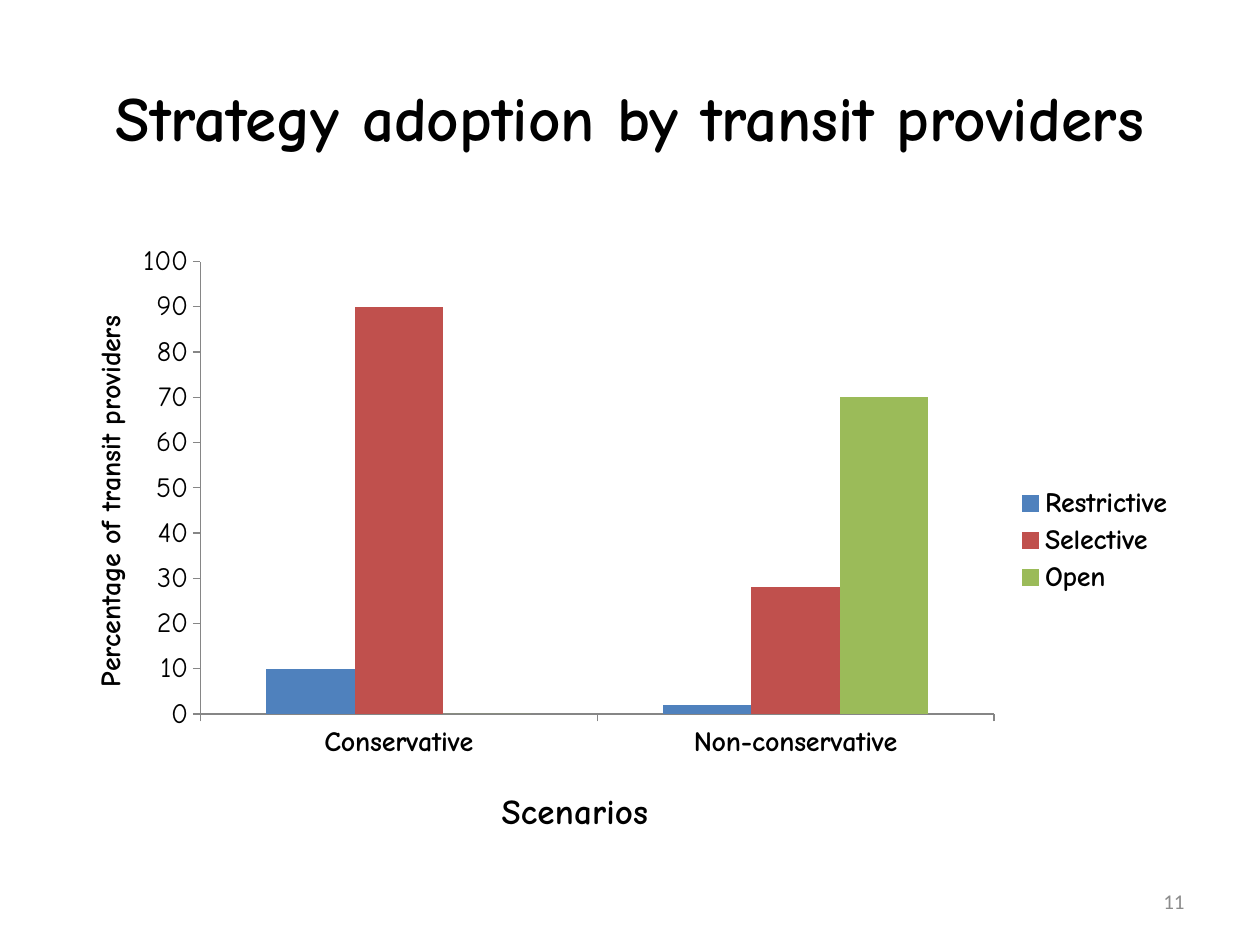
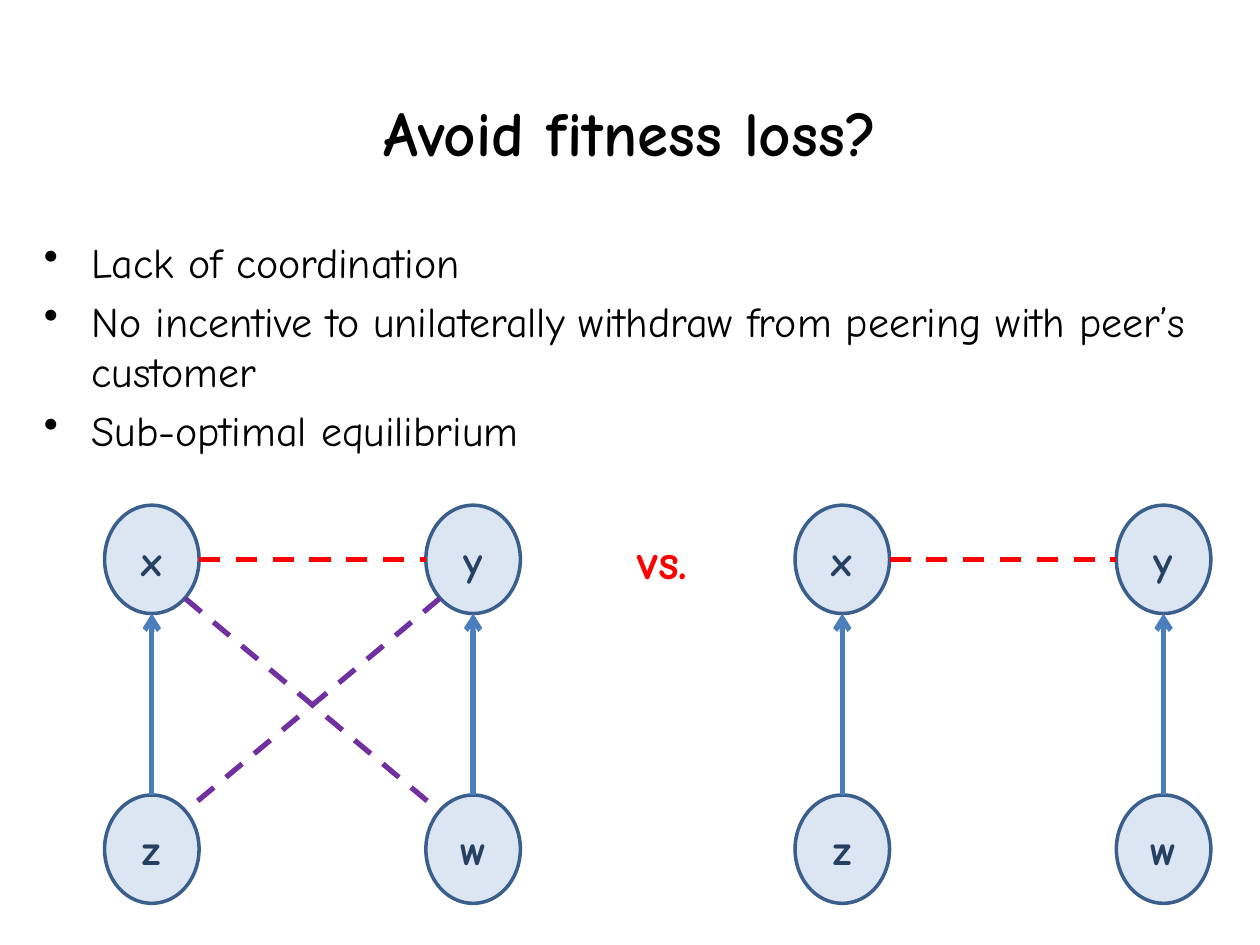
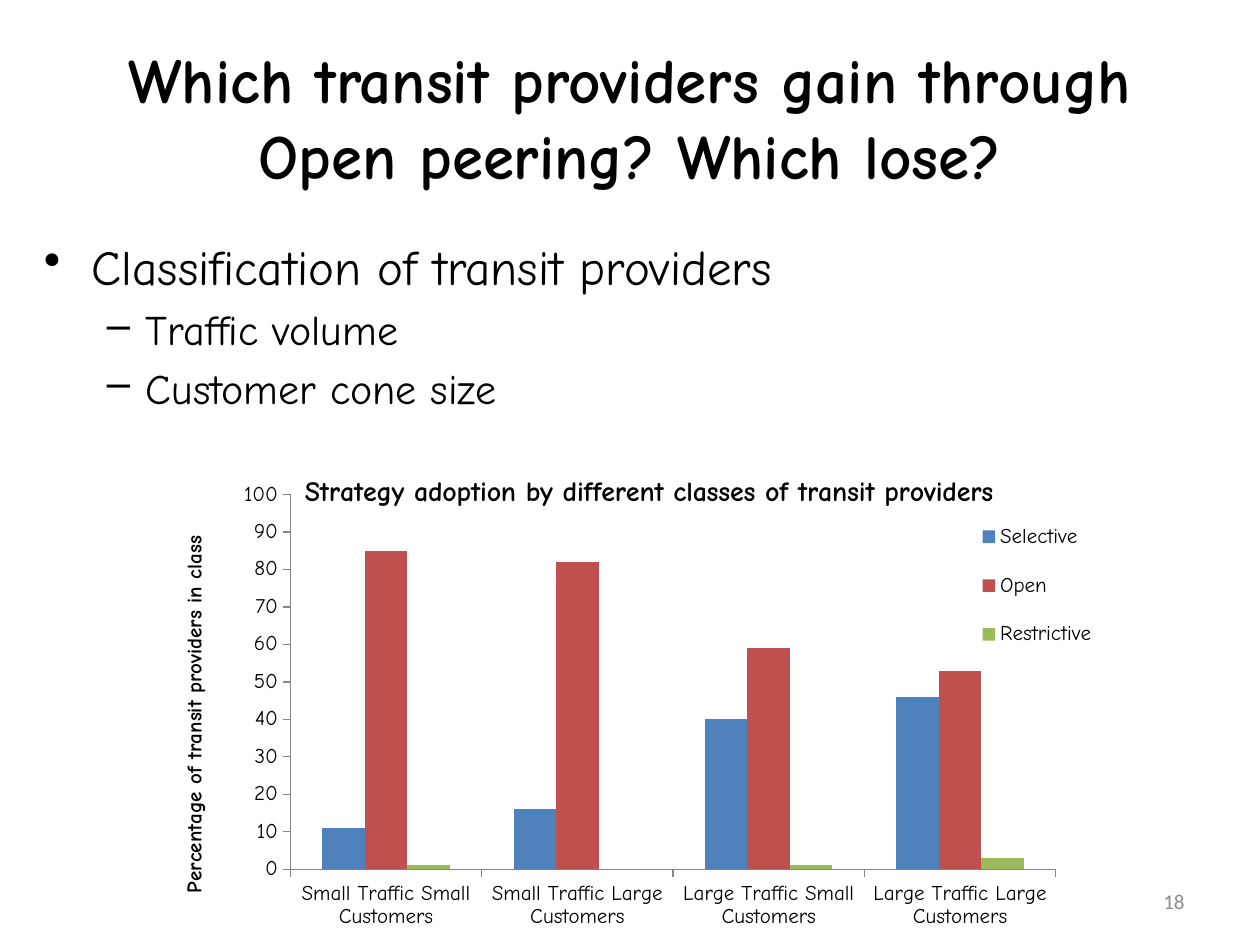
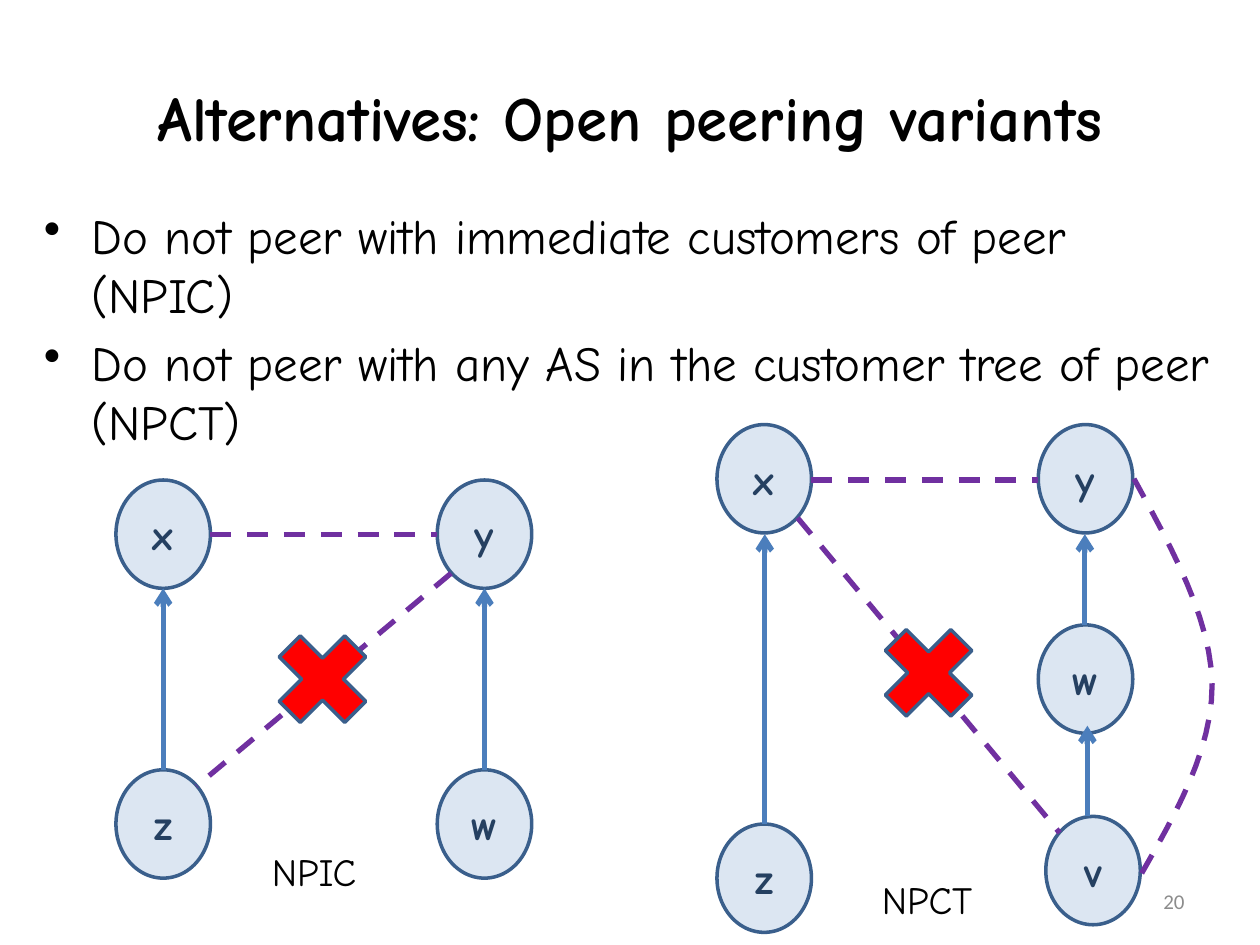
"""Build four slides on peering strategies of transit providers."""
import pptx
import pptx.chart.data
import pptx.dml.color
import pptx.enum.chart
import pptx.enum.shapes
import pptx.enum.text
import pptx.oxml
import pptx.oxml.ns
import pptx.util

Inches = pptx.util.Inches
Pt = pptx.util.Pt
RGB = pptx.dml.color.RGBColor.from_string
Align = pptx.enum.text.PP_ALIGN
Anchor = pptx.enum.text.MSO_ANCHOR
Kind = pptx.enum.shapes.MSO_SHAPE
Dash = pptx.enum.dml.MSO_LINE
Chart = pptx.enum.chart
qn = pptx.oxml.ns.qn

HUES = {
    "ink": "000000", "page": "8C8C8C", "node": "DCE6F2", "edge": "3A5F8C",
    "name": "254061", "arrow": "4B7EBC", "red": "FF0000", "plum": "7030A0",
    "axis": "868686", "blue": "4F81BD", "rust": "C0504D", "green": "9BBB59",
}
FACE = "Comic Neue"
WIDE, HIGH = 0.75, 0.86
STEP_X, STEP_Y = 2.55, 2.3


def style(font, size, bold=False, hue="ink", face=FACE):
    font.name, font.size, font.bold = face, Pt(size), bold
    font.color.rgb = RGB(HUES[hue])


def link(page, start, end, hue, arrow=False):
    line = page.shapes.add_connector(
        pptx.enum.shapes.MSO_CONNECTOR.STRAIGHT, *map(Inches, start + end))
    line.line.color.rgb = RGB(HUES[hue])
    line.line.width = Pt(3)
    if arrow:
        tail = pptx.oxml.ns.nsdecls("a")
        line.line._get_or_add_ln().append(
            pptx.oxml.parse_xml(f'<a:tailEnd {tail} type="arrow"/>'))
    else:
        line.line.dash_style = Dash.DASH
    props = line._element.spPr
    props.append(props.makeelement(qn("a:effectLst"), {}))


deck = pptx.Presentation()
deck.slide_width, deck.slide_height = Inches(10), Inches(7.5)

pages = []
for title, top in (
    ("Strategy adoption by transit providers", 0.3),
    ("Avoid fitness loss?", 0.42),
    ("Which transit providers gain through Open peering? Which lose?", 0.3),
    ("Alternatives: Open peering variants", 0.3),
):
    page = deck.slides.add_slide(deck.slide_layouts[5])
    head = page.shapes.title
    head.left, head.top, head.width, head.height = map(Inches, (0.5, top, 9, 1.25))
    frame = head.text_frame
    frame.auto_size = pptx.enum.text.MSO_AUTO_SIZE.NONE
    frame.vertical_anchor = Anchor.MIDDLE
    frame.paragraphs[0].alignment = Align.CENTER
    run = frame.paragraphs[0].add_run()
    run.text = title
    style(run.font, 36, True)
    pages.append(page)
adopt, avoid, gain, other = pages

LEVELS = (("•", 0.38, 0.38), ("–", 0.81, 0.31))
for page, box, items in (
    (avoid, (0.25, 1.83, 9.67, 5.08), (
        (0, 24, "Lack of coordination"),
        (0, 24, "No incentive to unilaterally withdraw from peering with peer’s customer"),
        (0, 24, "Sub-optimal equilibrium"))),
    (gain, (0.25, 1.83, 9.5, 5.33), (
        (0, 28, "Classification of transit providers"),
        (1, 24, "Traffic volume"),
        (1, 24, "Customer cone size"))),
    (other, (0.25, 1.58, 9.5, 5.33), (
        (0, 28, "Do not peer with immediate customers of peer (NPIC)"),
        (0, 28, "Do not peer with any AS in the customer tree of peer (NPCT)"))),
):
    frame = page.shapes.add_textbox(*map(Inches, box)).text_frame
    frame.word_wrap = True
    for i, (level, size, text) in enumerate(items):
        para = frame.add_paragraph() if i else frame.paragraphs[0]
        para.level = level
        para.space_before = Pt(size * 0.2)
        mark, left, hang = LEVELS[level]
        props = para._p.get_or_add_pPr()
        props.set("marL", str(Inches(left)))
        props.set("indent", str(-Inches(hang)))
        props.append(props.makeelement(qn("a:buChar"), {"char": mark}))
        run = para.add_run()
        run.text = text
        style(run.font, size)

for page, text, box, size, bold, hue in (
    (avoid, "vs.", (4.96, 4.16, 0.75, 0.57), 28, True, "red"),
    (other, "NPIC", (2.06, 6.68, 1, 0.47), 22, False, "ink"),
    (other, "NPCT", (6.9, 6.9, 1, 0.47), 22, False, "ink"),
):
    frame = page.shapes.add_textbox(*map(Inches, box)).text_frame
    frame.word_wrap = text != "vs."
    run = frame.paragraphs[0].add_run()
    run.text = text
    style(run.font, size, bold, hue)

for page, text in ((adopt, "11"), (gain, "18"), (other, "20")):
    frame = page.shapes.add_textbox(*map(Inches, (7.17, 6.95, 2.33, 0.4))).text_frame
    frame.word_wrap = True
    frame.vertical_anchor = Anchor.MIDDLE
    frame.paragraphs[0].alignment = Align.RIGHT
    run = frame.paragraphs[0].add_run()
    run.text = text
    style(run.font, 12, hue="page", face="Calibri")

for page, box, size, bold, plot, key, heads, cats, rows in (
    (adopt, (0.42, 1.83, 9, 4.92), 16, True, (0.13, 0.05, 0.7, 0.73), None,
     {"x": ("Scenarios", 20, (0.39, 0.89)),
      "y": ("Percentage of transit providers", 16, (0.03, 0.13))},
     ("Conservative", "Non-conservative"),
     (("Restrictive", (10, 2)), ("Selective", (90, 28)), ("Open", (0, 70)))),
    (gain, (1.33, 3.5, 7.5, 4.25), 12, False, (0.13, 0.1, 0.81, 0.7),
     (0.84, 0.11, 0.16, 0.32),
     {"top": ("Strategy adoption by different classes of transit providers", 16, (0.14, 0.05)),
      "y": ("Percentage of transit providers in class", 12, (0.01, 0.17))},
     [f"{flow} Traffic {cone} Customers"
      for flow in ("Small", "Large") for cone in ("Small", "Large")],
     (("Selective", (11, 16, 40, 46)), ("Open", (85, 82, 59, 53)),
      ("Restrictive", (1, 0, 1, 3)))),
):
    data = pptx.chart.data.CategoryChartData()
    data.categories = cats
    for name, vals in rows:
        data.add_series(name, vals)
    chart = page.shapes.add_chart(
        Chart.XL_CHART_TYPE.COLUMN_CLUSTERED, *map(Inches, box), data).chart
    style(chart.font, 10, face="Calibri")
    bars = chart.plots[0]
    bars.vary_by_categories = False
    bars.gap_width, bars.overlap = 150, 0
    for series, hue in zip(bars.series, ("blue", "rust", "green")):
        series.format.fill.solid()
        series.format.fill.fore_color.rgb = RGB(HUES[hue])

    chart.has_title = False
    chart.has_legend = True
    chart.legend.position = Chart.XL_LEGEND_POSITION.RIGHT
    chart.legend.include_in_layout = False
    style(chart.legend.font, size, bold)
    across, up = chart.category_axis, chart.value_axis
    up.minimum_scale, up.maximum_scale, up.major_unit = 0, 100, 10
    for axis, thick in ((across, bold), (up, False)):
        axis.has_major_gridlines = False
        axis.major_tick_mark = Chart.XL_TICK_MARK.OUTSIDE
        axis.format.line.color.rgb = RGB(HUES["axis"])
        axis.format.line.width = Pt(0.75)
        style(axis.tick_labels.font, size, thick)

    spots = [(chart._chartSpace.chart.plotArea, 0, plot)]
    if key:
        spots.append((chart.legend._element, 1, key))
    for side, (text, pts, spot) in heads.items():
        if side == "top":
            title = chart.chart_title
            title.include_in_layout = True
        else:
            title = (across if side == "x" else up).axis_title
        frame = title.text_frame
        run = frame.paragraphs[0].add_run()
        run.text = text
        style(run.font, pts, True)
        if side == "y":
            frame._txBody.bodyPr.set("rot", "-5400000")
            frame._txBody.bodyPr.set("vert", "horz")
        spots.append((title._element, 1, spot))

    for node, index, spot in spots:
        for old in node.findall(qn("c:layout")):
            node.remove(old)
        parts = [("layoutTarget", "inner")] if index == 0 else []
        parts += [("xMode", "edge"), ("yMode", "edge")]
        parts += zip("xywh", spot)
        inner = "".join(f'<c:{tag} val="{val}"/>' for tag, val in parts)
        space = pptx.oxml.ns.nsdecls("c")
        node.insert(index, pptx.oxml.parse_xml(
            f"<c:layout {space}><c:manualLayout>{inner}</c:manualLayout></c:layout>"))

quads = (
    (avoid, 6.31, 4.01, "red", ""),
    (avoid, 0.83, 4.01, "red", "zw"),
    (other, 0.92, 3.81, "plum", "z"),
)
nodes = [
    (page, name, left + i % 2 * STEP_X, top + i // 2 * STEP_Y)
    for page, left, top, hue, cross in quads for i, name in enumerate("xyzw")
]
nodes += [
    (other, "x", 5.69, 3.37), (other, "y", 8.24, 3.37), (other, "z", 5.69, 6.54),
    (other, "w", 8.24, 4.96), (other, "v", 8.3, 6.48),
]
for page, name, left, top in nodes:
    oval = page.shapes.add_shape(Kind.OVAL, *map(Inches, (left, top, WIDE, HIGH)))
    oval.shadow.inherit = False
    oval.fill.solid()
    oval.fill.fore_color.rgb = RGB(HUES["node"])
    oval.line.color.rgb = RGB(HUES["edge"])
    oval.line.width = Pt(2)
    frame = oval.text_frame
    frame.vertical_anchor = Anchor.MIDDLE
    frame.paragraphs[0].alignment = Align.CENTER
    run = frame.paragraphs[0].add_run()
    run.text = name
    style(run.font, 24, True, "name")

for page, left, top, hue, cross in quads:
    for mid in (left + WIDE / 2, left + WIDE / 2 + STEP_X):
        link(page, (mid, top + STEP_Y), (mid, top + HIGH), "arrow", True)
    link(page, (left + WIDE, top + HIGH / 2), (left + STEP_X, top + HIGH / 2), hue)
    near, far = left + 0.64, left + 2.66
    for name in cross:
        start, end = (far, near) if name == "z" else (near, far)
        link(page, (start, top + 0.74), (end, top + 2.43), "plum")

for start, end, hue, arrow in (
    ((6.07, 6.54), (6.07, 4.24), "arrow", True),
    ((8.61, 4.96), (8.61, 4.24), "arrow", True),
    ((8.63, 6.48), (8.63, 5.76), "arrow", True),
    ((6.44, 3.81), (8.24, 3.81), "plum", False),
    ((6.33, 4.11), (8.41, 6.61), "plum", False),
):
    link(other, start, end, hue, arrow)

for left, top in ((2.06, 4.89), (6.87, 4.84)):
    cross = other.shapes.add_shape(Kind.MATH_MULTIPLY, *map(Inches, (left, top, 1, 1)))
    cross.shadow.inherit = False
    cross.fill.solid()
    cross.fill.fore_color.rgb = RGB(HUES["red"])
    cross.line.color.rgb = RGB(HUES["edge"])
    cross.line.width = Pt(2)

dots = []
for bend in (
    ((9, 3.8), (9.3, 4.35), (9.61, 4.91), (9.62, 5.43)),
    ((9.62, 5.43), (9.62, 5.96), (9.33, 6.46), (9.05, 6.95)),
):
    for t in [i / 12 for i in range(1, 13)]:
        mix = ((1 - t) ** 3, 3 * t * (1 - t) ** 2, 3 * t * t * (1 - t), t ** 3)
        dots.append([Inches(sum(m * p[k] for m, p in zip(mix, bend))) for k in (0, 1)])
pen = other.shapes.build_freeform(Inches(9), Inches(3.8))
pen.add_line_segments(dots, close=False)
curve = pen.convert_to_shape()
curve.shadow.inherit = False
curve.fill.background()
curve.line.color.rgb = RGB(HUES["plum"])
curve.line.width = Pt(3)
curve.line.dash_style = Dash.DASH

deck.save("out.pptx")
